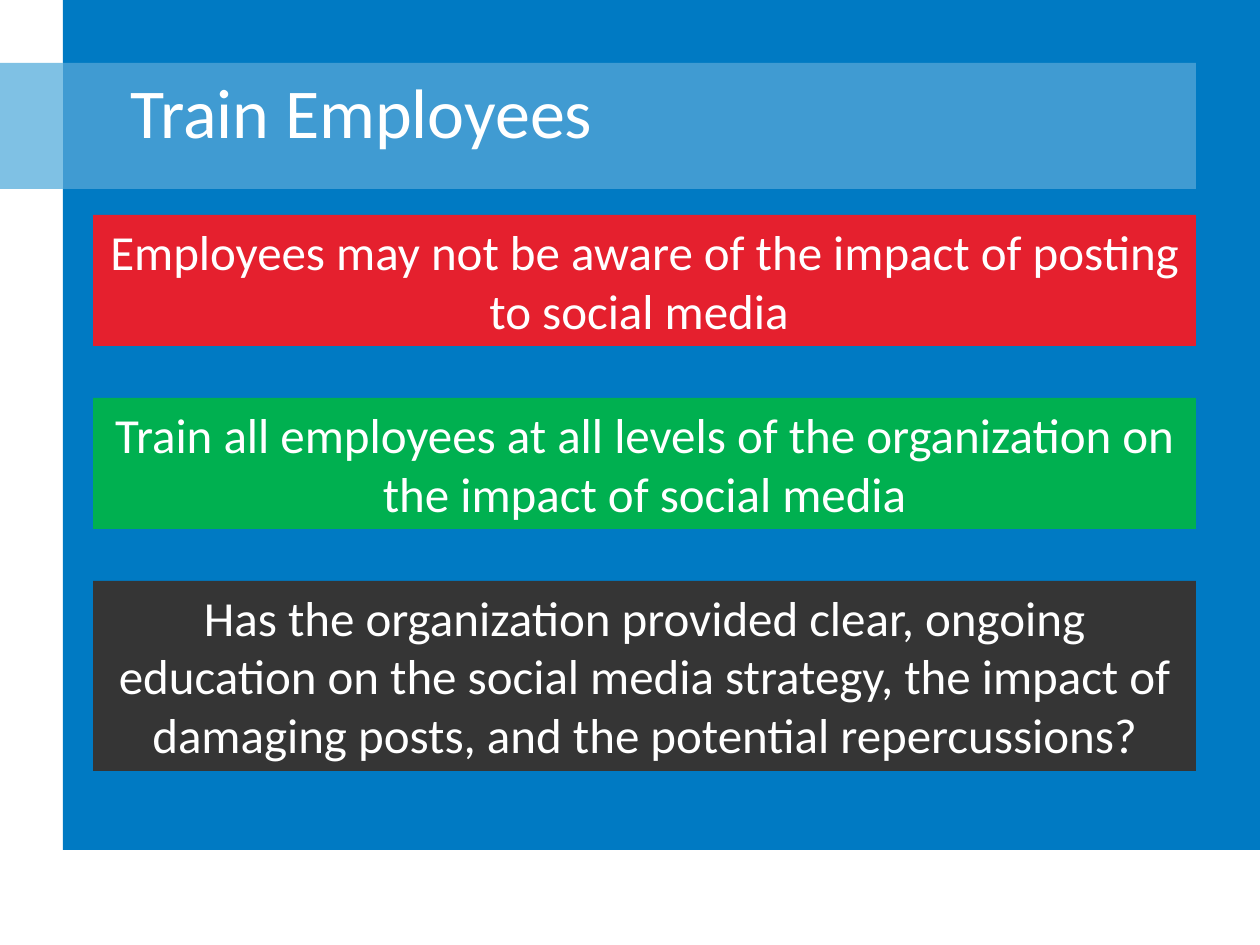
from pptx import Presentation
from pptx.dml.color import RGBColor
from pptx.enum.shapes import MSO_SHAPE
from pptx.enum.text import MSO_ANCHOR, PP_ALIGN
from pptx.util import Emu, Pt

PX_PER_INCH = 126
FONT = "Calibri"
COLORS = {
    "backdrop": "007AC3",
    "banner": "409BD2",
    "banner_tab": "7FC1E4",
    "red": "E5202E",
    "green": "00B050",
    "charcoal": "353535",
    "text": "FFFFFF",
}

# Message boxes: fill, height, wording
MESSAGES = [
    ("red", 131,
     "Employees may not be aware of the impact of posting to social media "),
    ("green", 131,
     "Train all employees at all levels of the organization on the impact "
     "of social media"),
    ("charcoal", 190,
     "Has the organization provided clear, ongoing education on the social "
     "media strategy, the impact of damaging posts, and the potential "
     "repercussions?"),
]
MESSAGE_LEFT, MESSAGE_TOP, MESSAGE_WIDTH, MESSAGE_GAP = 93, 215, 1103, 52


def px(length):
    return Emu(round(length * 914400 / PX_PER_INCH))


def color(name):
    return RGBColor.from_string(COLORS[name])


def add_panel(slide, fill, left, top, width, height):
    panel = slide.shapes.add_shape(
        MSO_SHAPE.RECTANGLE, px(left), px(top), px(width), px(height))
    panel.shadow.inherit = False
    panel.fill.solid()
    panel.fill.fore_color.rgb = color(fill)
    panel.line.fill.background()
    return panel


def write(shape, text, size, align, anchor):
    frame = shape.text_frame
    frame.word_wrap = True
    frame.vertical_anchor = anchor
    frame.text = text
    para = frame.paragraphs[0]
    para.alignment = align
    font = para.runs[0].font
    font.name = FONT
    font.size = Pt(size)
    font.color.rgb = color("text")


def add_title(slide, text, left, top, width, height):
    box = slide.shapes.add_textbox(px(left), px(top), px(width), px(height))
    write(box, text, 40, PP_ALIGN.LEFT, MSO_ANCHOR.MIDDLE)


def add_messages(slide):
    top = MESSAGE_TOP
    for fill, height, text in MESSAGES:
        panel = add_panel(slide, fill, MESSAGE_LEFT, top, MESSAGE_WIDTH, height)
        write(panel, text, 28, PP_ALIGN.CENTER, MSO_ANCHOR.TOP)
        top += height + MESSAGE_GAP


def main():
    deck = Presentation()
    deck.slide_width, deck.slide_height = px(1260), px(945)
    slide = deck.slides.add_slide(deck.slide_layouts[6])

    # Backdrop and title banner
    add_panel(slide, "backdrop", 63, 0, 1197, 850)
    add_panel(slide, "banner", 63, 63, 1133, 126)
    add_panel(slide, "banner_tab", 0, 63, 63, 126)
    add_title(slide, "Train Employees", 118, 32, 1052, 157)

    # Stacked messages
    add_messages(slide)

    deck.save("out.pptx")


if __name__ == "__main__":
    main()
